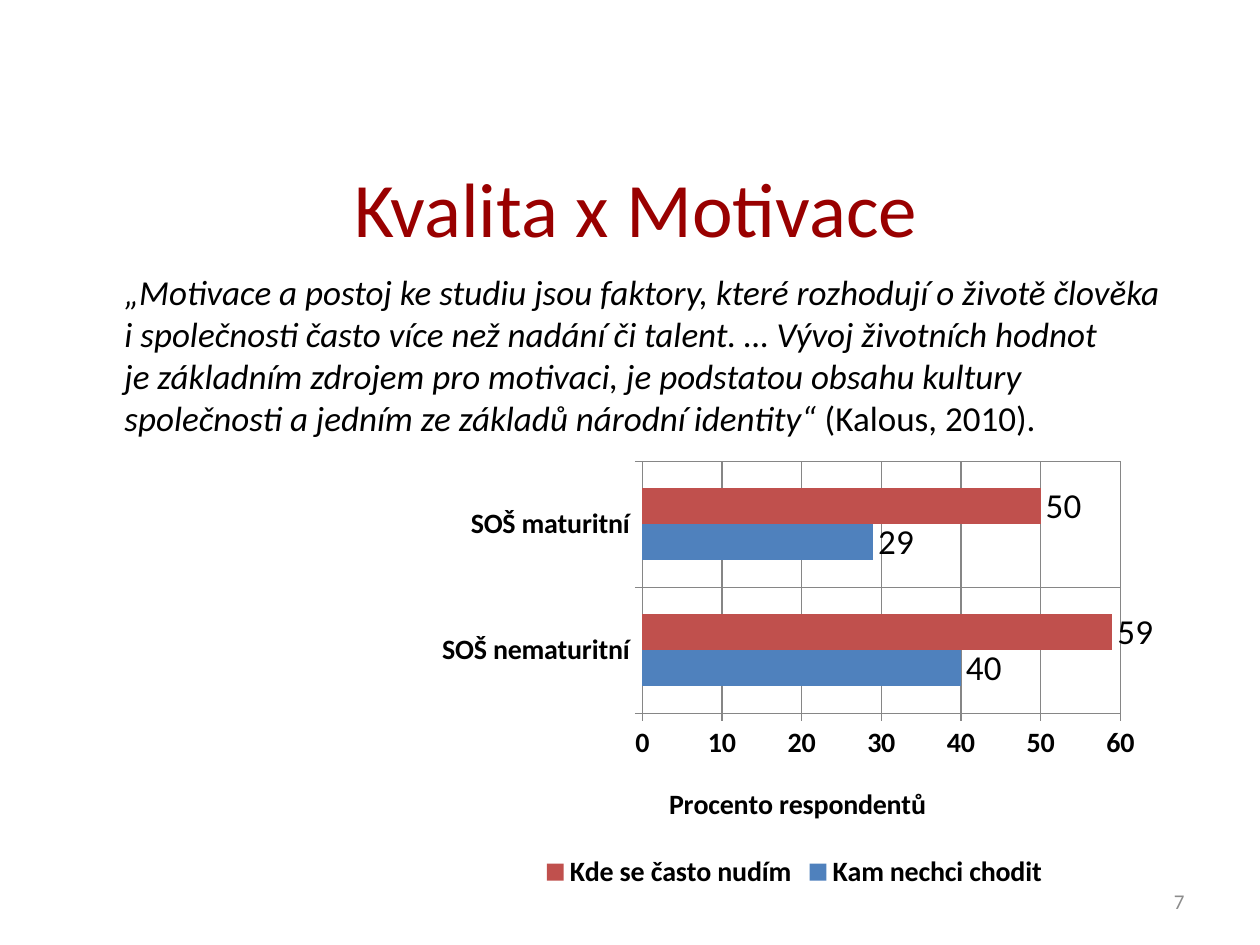
from lxml.etree import SubElement
from pptx import Presentation
from pptx.chart.data import CategoryChartData
from pptx.dml.color import RGBColor
from pptx.enum.chart import XL_CHART_TYPE, XL_LABEL_POSITION, XL_LEGEND_POSITION, XL_TICK_MARK
from pptx.enum.text import MSO_ANCHOR, PP_ALIGN
from pptx.oxml.ns import qn
from pptx.util import Inches, Pt

WIDTH, HEIGHT = Inches(10), Inches(7.5)
FONT = "Calibri"
COLORS = {"title": "990000", "text": "000000", "number": "8C8C8C", "grid": "868686",
          "blue": "4F81BD", "red": "C0504D"}

# Boxes as shares of the slide: left, top, width, height
BOXES = {
    "title": (0.055, 0.167, 0.9, 0.104),
    "quote": (0.051, 0.28, 0.9, 0.208),
    "chart": (0.343, 0.479, 0.575, 0.468),
    "number": (0.717, 0.927, 0.233, 0.053),
}
QUOTE = ("„Motivace a postoj ke studiu jsou faktory, které rozhodují o životě člověka \v"
         "i společnosti často více než nadání či talent. … Vývoj životních hodnot \v"
         "je základním zdrojem pro motivaci, je podstatou obsahu kultury společnosti "
         "a jedním ze základů národní identity“")
CATEGORIES = ["SOŠ nematuritní", "SOŠ maturitní"]
SERIES = [("Kam nechci chodit", (40, 29), "blue"), ("Kde se často nudím", (59, 50), "red")]


def place(name):
    left, top, width, height = BOXES[name]
    return (round(left * WIDTH), round(top * HEIGHT),
            round(width * WIDTH), round(height * HEIGHT))


def set_values(target, values):
    for key, value in values.items():
        setattr(target, key, value)


def style_font(font, size, color="text", **values):
    set_values(font, {"name": FONT, "size": Pt(size), **values})
    font.color.rgb = RGBColor.from_string(COLORS[color])


def add_text(page, box, spans, size, color, align=PP_ALIGN.LEFT, anchor=MSO_ANCHOR.MIDDLE):
    """Write one paragraph of (text, italic) spans and return it."""
    frame = page.shapes.add_textbox(*box).text_frame
    set_values(frame, {"word_wrap": True, "vertical_anchor": anchor})
    para = frame.paragraphs[0]
    para.alignment = align
    for text, italic in spans:
        for index, line in enumerate(text.split("\v")):
            if index:
                para.add_line_break()
            span = para.add_run()
            span.text = line
            style_font(span.font, size, color, italic=italic)
    return para


def add_quote(page, box):
    spans = [(QUOTE, True), (" (Kalous, 2010).", False)]
    para = add_text(page, box, spans, 20, "text", anchor=MSO_ANCHOR.TOP)
    para._p.get_or_add_pPr().set("marL", str(Inches(0.38)))


def set_layout(parent, before, **shares):
    """Give a chart part a fixed place, in shares of the chart."""
    for old in parent.findall(qn("c:layout")):
        parent.remove(old)
    layout = SubElement(parent, qn("c:layout"))
    parent.find(qn(before)).addprevious(layout)
    manual = SubElement(layout, qn("c:manualLayout"))
    settings = {"xMode": "edge", "yMode": "edge", **shares}
    if "w" in shares:
        settings = {"layoutTarget": "inner", **settings}
    for tag, value in settings.items():
        SubElement(manual, qn(f"c:{tag}")).set("val", str(value))


def add_bar_chart(page, box):
    data = CategoryChartData()
    data.categories = CATEGORIES
    for name, values, _ in SERIES:
        data.add_series(name, values)
    chart = page.shapes.add_chart(XL_CHART_TYPE.BAR_CLUSTERED, *box, data).chart
    chart.has_title = False
    style_font(chart.font, 10)

    # Bars and their labels
    plot = chart.plots[0]
    set_values(plot, {"gap_width": 150, "overlap": 0, "vary_by_categories": False})
    for series, (_, _, color) in zip(plot.series, SERIES):
        series.format.fill.solid()
        series.format.fill.fore_color.rgb = RGBColor.from_string(COLORS[color])
        labels = series.data_labels
        set_values(labels, {"show_value": True, "position": XL_LABEL_POSITION.OUTSIDE_END})
        style_font(labels.font, 20)

    # Axes and gridlines
    for axis in (chart.category_axis, chart.value_axis):
        set_values(axis, {"has_major_gridlines": True, "major_tick_mark": XL_TICK_MARK.OUTSIDE,
                          "minor_tick_mark": XL_TICK_MARK.NONE})
        style_font(axis.tick_labels.font, 16, bold=True)
        for line in (axis.format.line, axis.major_gridlines.format.line):
            line.width = Pt(0.75)
            line.color.rgb = RGBColor.from_string(COLORS["grid"])
    set_values(chart.value_axis, {"minimum_scale": 0, "maximum_scale": 60, "major_unit": 10})

    # Axis title
    title = chart.value_axis.axis_title
    span = title.text_frame.paragraphs[0].add_run()
    span.text = "Procento respondentů"
    style_font(span.font, 16, bold=True)
    set_layout(title._element, "c:overlay", x=0.32, y=0.74)

    # Legend and plot area
    chart.has_legend = True
    set_values(chart.legend, {"position": XL_LEGEND_POSITION.BOTTOM, "include_in_layout": False})
    style_font(chart.legend.font, 16, bold=True)
    area = chart._chartSpace.chart.plotArea
    set_layout(area, "c:barChart", x=0.29, y=0.02, w=0.66, h=0.57)


def main():
    deck = Presentation()
    set_values(deck, {"slide_width": WIDTH, "slide_height": HEIGHT})
    page = deck.slides.add_slide(deck.slide_layouts[6])
    add_text(page, place("title"), [("Kvalita x Motivace", False)], 44, "title", PP_ALIGN.CENTER)
    add_quote(page, place("quote"))
    add_text(page, place("number"), [("7", False)], 12, "number", PP_ALIGN.RIGHT)
    add_bar_chart(page, place("chart"))
    deck.save("out.pptx")


if __name__ == "__main__":
    main()
